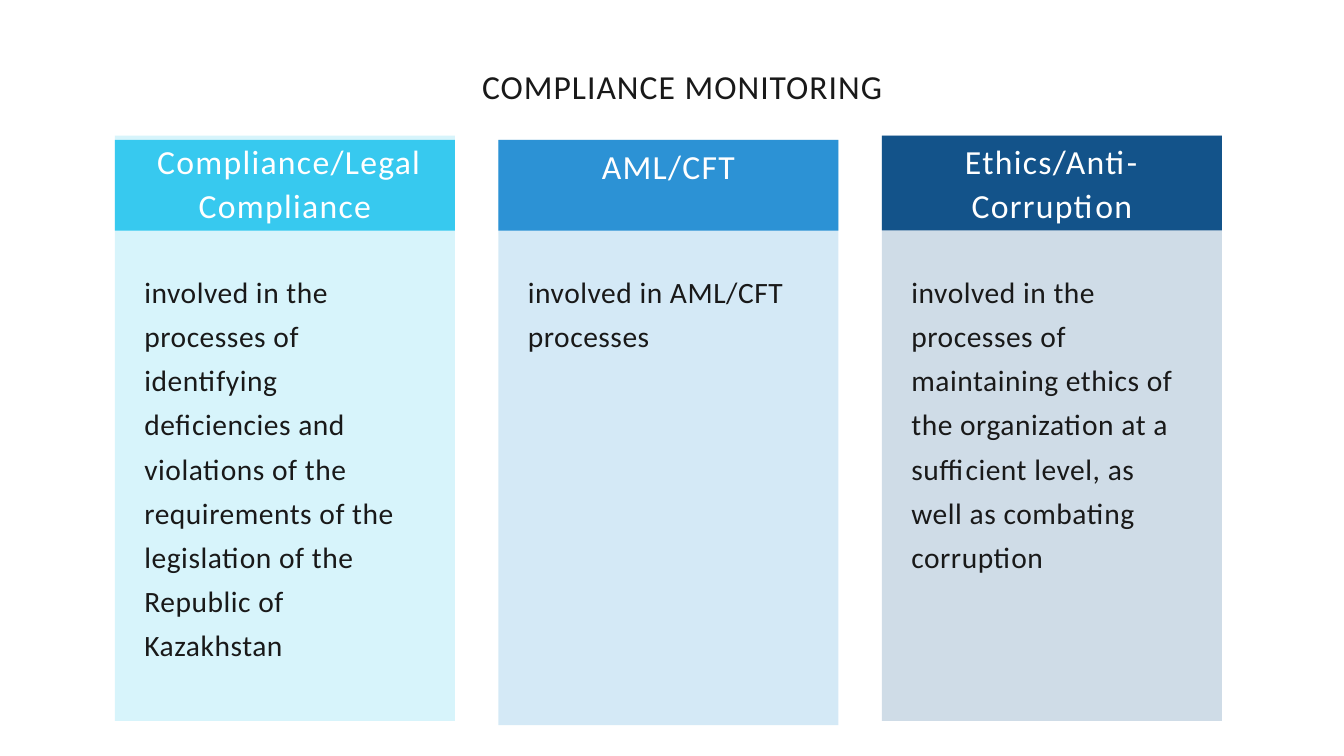
from pptx import Presentation
from pptx.dml.color import RGBColor
from pptx.enum.shapes import MSO_SHAPE as Kind
from pptx.enum.text import MSO_AUTO_SIZE as Fit, PP_ALIGN as Align
from pptx.oxml.ns import qn
from pptx.util import Pt
from lxml.etree import SubElement

LEFT, STEP, WIDE = 123.1, 410.9, 364.3
INSET, INNER = 31.6, 301.7
HEAD_END, DEEP = 247, 627.1
INK, WHITE = "191919", "FFFFFF"

# colour, panel top, head top, head text inset, head text top, height, head, body, body height
COLS = [
    ("37C9EF", 145.4, 149.8, 5.4, 147.6, 92.2, " Compliance/Legal Compliance",
     "involved in the processes of identifying deficiencies and violations "
     "of the requirements of the legislation of the Republic of Kazakhstan", 424.8),
    ("2C92D5", 149.8, 149.8, INSET, 153.4, 45.4, "AML/CFT",
     "involved in AML/CFT processes", 92.9),
    ("13538A", 145.4, 145.4, INSET, 147.6, 92.2, "Ethics/Anti-Corruption",
     "involved in the processes of maintaining ethics of the organization "
     "at a sufficient level, as well as combating corruption", 377.3),
]


def color(code):
    return RGBColor.from_string(code)


class Page:
    font = "Calibri"

    def __init__(self, slide):
        self.shapes = slide.shapes

    def rect(self, x, y, w, h, fill, alpha=100):
        """Add a plain rectangle; alpha is its opacity in percent."""
        box = self.shapes.add_shape(Kind.RECTANGLE, Pt(x), Pt(y), Pt(w), Pt(h))
        box.shadow.inherit = False
        box.fill.solid()
        box.fill.fore_color.rgb = color(fill)
        box.line.fill.background()
        if alpha < 100:
            tint = box._element.spPr.find(qn("a:solidFill"))[0]
            SubElement(tint, qn("a:alpha")).set("val", str(alpha * 1000))

    def text(self, x, y, w, h, words, size, lead, track, ink=INK, align=Align.CENTER):
        """Add a text box; lead is the line pitch, track the letter spacing."""
        box = self.shapes.add_textbox(Pt(x), Pt(y), Pt(w), Pt(h))
        frame = box.text_frame
        frame.margin_left = frame.margin_right = 0
        frame.margin_top = frame.margin_bottom = 0
        frame.word_wrap = True
        frame.auto_size = Fit.SHAPE_TO_FIT_TEXT
        frame.text = words
        para = frame.paragraphs[0]
        para.alignment = align
        para.line_spacing = Pt(lead)
        run = para.runs[0]
        run.font.name = self.font
        run.font.size = Pt(size)
        run.font.color.rgb = color(ink)
        run._r.get_or_add_rPr().set("spc", str(round(track * 100)))


def main():
    deck = Presentation()
    deck.slide_width, deck.slide_height = Pt(1440), Pt(810)
    page = Page(deck.slides.add_slide(deck.slide_layouts[6]))

    for i, (fill, top, head_top, pad, y, h, head, body, tall) in enumerate(COLS):
        x = LEFT + i * STEP
        page.rect(x, top, WIDE, DEEP, fill, alpha=20)
        page.rect(x, head_top, WIDE, HEAD_END - head_top, fill)
        page.text(x + INSET, 283.7, INNER, tall, body, 31.6, 47.4, 0.6, align=Align.LEFT)
        page.text(x + pad, y, WIDE - 2 * pad, h, head, 36.1, 46.6, 1.4, WHITE)

    page.text(427, 66.2, 599, 92.9, " COMPLIANCE MONITORING", 36, 47.2, 1.1)
    deck.save("out.pptx")


if __name__ == "__main__":
    main()
